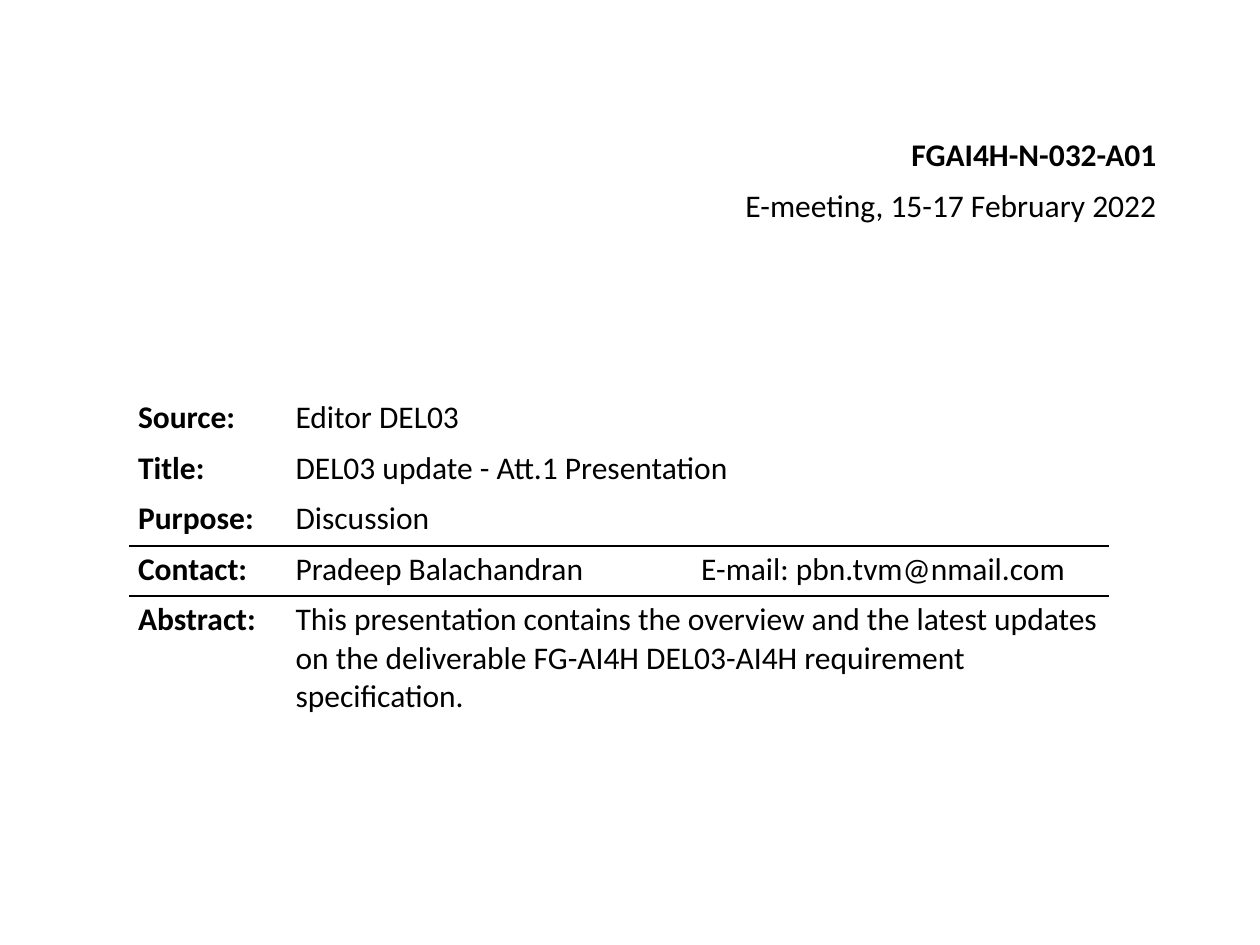
"""Build the cover slide of a meeting document with its details table."""
from lxml import etree
from pptx import Presentation, util as u
from pptx.dml.color import RGBColor
from pptx.enum import text
from pptx.oxml import ns

theme = {"ink": "000000", "font": "Calibri", "size": 18, "rule": 1.5}
plain = "{2D5ABB26-0587-4C30-8999-92F81FD0307C}"


def write(frame, words, bold, align):
    para = frame.paragraphs[0]
    para.alignment = align
    run = para.add_run()
    run.text = words
    form = {"name": theme["font"], "size": u.Pt(theme["size"]), "bold": bold}
    for key, val in form.items():
        setattr(run.font, key, val)
    run.font.color.rgb = RGBColor.from_string(theme["ink"])


def rule(cell, side):
    line = etree.Element(ns.qn(f"a:{side}"), w=str(u.Pt(theme["rule"])))
    fill = etree.SubElement(line, ns.qn("a:solidFill"))
    etree.SubElement(fill, ns.qn("a:srgbClr"), val=theme["ink"])
    cell._tc.get_or_add_tcPr().insert(0, line)


deck = Presentation()
deck.slide_width, deck.slide_height = u.Pt(720), u.Pt(540)
slide = deck.slides.add_slide(deck.slide_layouts[6])

heads = [
    ("FGAI4H-N-032-A01", True, 512, 73.4, 156),
    ("E-meeting, 15-17 February 2022", False, 415.4, 103, 252.6),
]
for words, bold, left, top, width in heads:
    box = slide.shapes.add_textbox(u.Pt(left), u.Pt(top), u.Pt(width), u.Pt(29))
    form = {"word_wrap": False, "auto_size": text.MSO_AUTO_SIZE.SHAPE_TO_FIT_TEXT}
    for key, val in form.items():
        setattr(box.text_frame, key, val)
    write(box.text_frame, words, bold, text.PP_ALIGN.RIGHT)

rows = [
    ("Source:", "Editor DEL03"),
    ("Title:", "DEL03 update - Att.1 Presentation"),
    ("Purpose:", "Discussion"),
    ("Contact:", "Pradeep Balachandran", "E-mail: pbn.tvm@nmail.com"),
    ("Abstract:", "This presentation contains the overview and the latest updates "
     "on the deliverable FG-AI4H DEL03-AI4H requirement specification."),
]
cols = [90, 231.8, 238.3]
highs = [28.8] * 4 + [70.6]
ruled = {2: ["lnB"], 3: ["lnB", "lnT"], 4: ["lnT"]}
inset = {"margin_left": 5.2, "margin_right": 5.2, "margin_top": 2.6, "margin_bottom": 2.6}

frame = slide.shapes.add_table(
    len(rows), len(cols), u.Pt(73.7), u.Pt(225.4), u.Pt(sum(cols)), u.Pt(sum(highs)))
table = frame.table
table.first_row = table.horz_banding = False
table._tbl.tblPr.find(ns.qn("a:tableStyleId")).text = plain
for col, width in zip(table.columns, cols):
    col.width = u.Pt(width)

for r, (row, high) in enumerate(zip(rows, highs)):
    table.rows[r].height = u.Pt(high)
    for c in range(len(cols)):
        cell = table.cell(r, c)
        cell.fill.background()
        for key, val in inset.items():
            setattr(cell, key, u.Pt(val))
        for side in ruled.get(r, []):
            rule(cell, side)
    if len(row) == 2:
        table.cell(r, 1).merge(table.cell(r, 2))
    for c, words in enumerate(row):
        write(table.cell(r, c).text_frame, words, c == 0, text.PP_ALIGN.LEFT)

deck.save("out.pptx")
